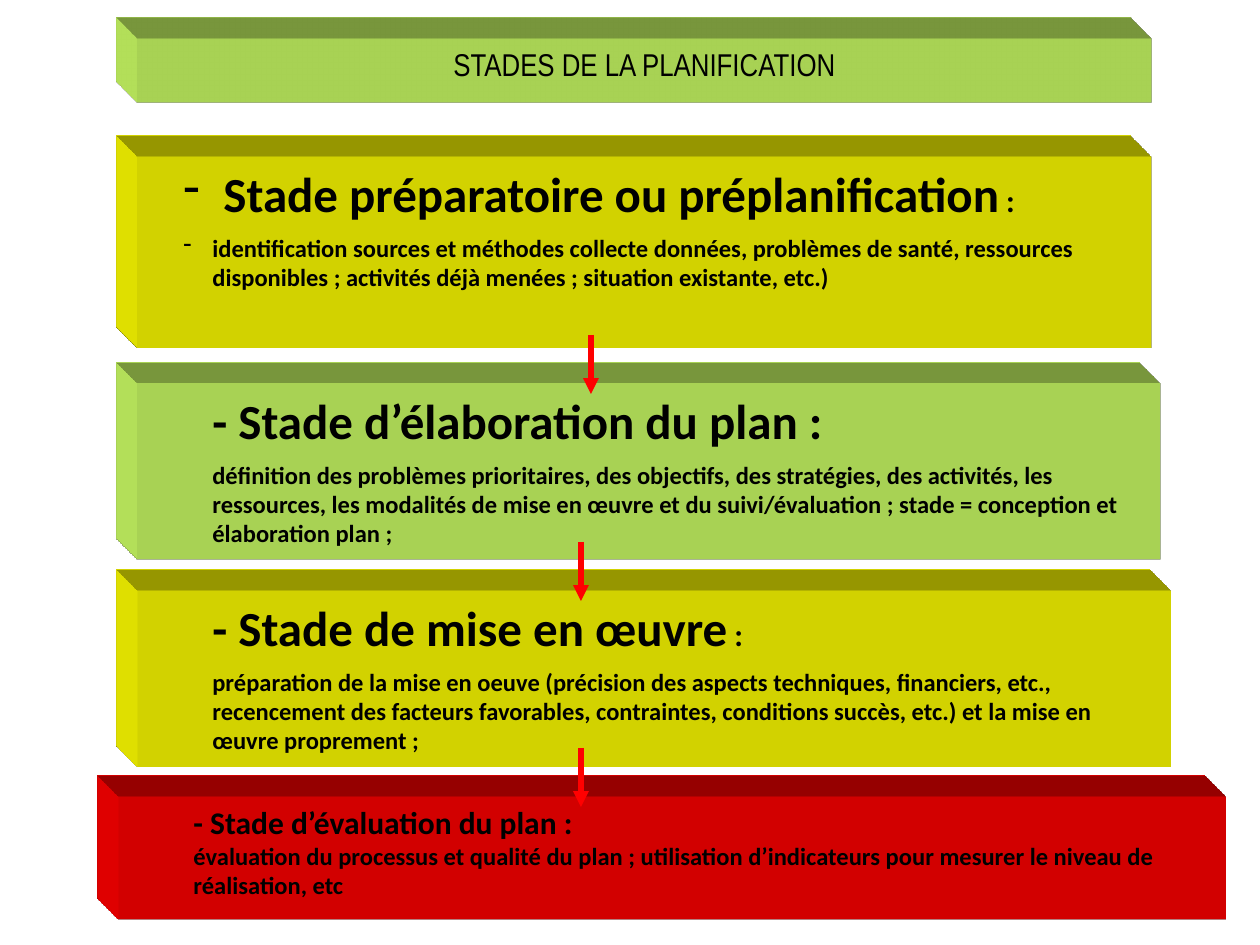
from lxml.etree import SubElement
from pptx import Presentation
from pptx.dml.color import RGBColor
from pptx.enum.shapes import MSO_CONNECTOR, MSO_SHAPE
from pptx.enum.text import MSO_ANCHOR, PP_ALIGN
from pptx.oxml import parse_xml
from pptx.oxml.ns import nsdecls, qn
from pptx.util import Pt

PX = 914400 // 126
GREEN = RGBColor(0xCC, 0xFF, 0x66)
YELLOW = RGBColor(0xFF, 0xFF, 0x00)
RED = RGBColor(0xFF, 0x00, 0x00)
BLACK = RGBColor(0x00, 0x00, 0x00)
INDENT = 63
HANGING = 29

deck = Presentation()
deck.slide_width, deck.slide_height = 1260 * PX, 945 * PX
page = deck.slides.add_slide(deck.slide_layouts[6])


def add_block(left, top, width, height, color):
    """Add a rectangle extruded towards the top left and return its text frame."""
    box = page.shapes.add_shape(MSO_SHAPE.RECTANGLE, *(n * PX for n in (left, top, width, height)))
    box.shadow.inherit = False
    box.fill.solid()
    box.fill.fore_color.rgb = color
    box.line.fill.background()
    properties = box.fill._xPr
    properties.append(parse_xml(
        f'<a:scene3d {nsdecls("a")}><a:camera prst="legacyObliqueTopLeft"/>'
        '<a:lightRig rig="legacyFlat3" dir="b"/></a:scene3d>'))
    properties.append(parse_xml(
        f'<a:sp3d {nsdecls("a")} extrusionH="430200" prstMaterial="legacyMatte">'
        '<a:bevelT w="13500" h="13500" prst="angle"/>'
        '<a:bevelB w="13500" h="13500" prst="angle"/>'
        f'<a:extrusionClr><a:srgbClr val="{color}"/></a:extrusionClr></a:sp3d>'))
    frame = box.text_frame
    frame.word_wrap = True
    frame.vertical_anchor = MSO_ANCHOR.TOP
    return frame


def add_span(para, text, **formats):
    span = para.add_run()
    span.text = text
    span.font.color.rgb = BLACK
    for name, value in formats.items():
        setattr(span.font, name, value)


title = add_block(137, 39, 1015, 64, GREEN).paragraphs[0]
title.alignment = PP_ALIGN.CENTER
add_span(title, "STADES DE LA PLANIFICATION", name="Arial Narrow", size=Pt(18))

# place, colour, bulleted, gap before the details, heading spans, details
stages = [
    ((137, 157, 1015, 191), YELLOW, True, 6,
     [(" Stade préparatoire ou préplanification", 28), (" :", 18)],
     "identification sources et méthodes collecte données, problèmes de santé, "
     "ressources disponibles ; activités déjà menées ; situation existante, etc.)"),
    ((137, 384, 1024, 176), GREEN, False, 6,
     [("- Stade d’élaboration du plan :", 28)],
     "définition des problèmes prioritaires, des objectifs, des stratégies, des "
     "activités, les ressources, les modalités de mise en œuvre et du "
     "suivi/évaluation ; stade = conception et élaboration plan ;"),
    ((137, 591, 1034, 176), YELLOW, False, 6,
     [("- Stade de mise en œuvre", 28), (" :", 18)],
     "préparation de la mise en oeuve (précision des aspects techniques, "
     "financiers, etc., recencement des facteurs favorables, contraintes, "
     "conditions succès, etc.) et la mise en œuvre proprement ;"),
    ((118, 797, 1108, 123), RED, False, 0,
     [("- Stade d’évaluation du plan :", 18)],
     "évaluation du processus et qualité du plan ; utilisation d’indicateurs pour "
     "mesurer le niveau de réalisation, etc"),
]
for place, color, bulleted, gap, heading, details in stages:
    frame = add_block(*place, color)
    frame.add_paragraph().space_before = Pt(gap)
    for para, spans in zip(frame.paragraphs, (heading, [(details, 14)])):
        para.alignment = PP_ALIGN.LEFT
        layout = para._p.get_or_add_pPr()
        layout.set("marL", str(INDENT * PX))
        layout.set("indent", str(-HANGING * PX if bulleted else 0))
        if bulleted:
            SubElement(layout, qn("a:buFontTx"))
            SubElement(layout, qn("a:buChar"), char="-")
        else:
            SubElement(layout, qn("a:buNone"))
        for text, size in spans:
            add_span(para, text, name="Calibri", size=Pt(size), bold=True)

for x, top in ((591, 335), (581, 542), (581, 748)):
    arrow = page.shapes.add_connector(
        MSO_CONNECTOR.STRAIGHT, x * PX, top * PX, x * PX, (top + 59) * PX)
    arrow.line.color.rgb = RED
    arrow.line.width = Pt(3)
    SubElement(arrow.line._get_or_add_ln(), qn("a:tailEnd"), type="triangle")
    SubElement(arrow._element.spPr, qn("a:effectLst"))

deck.save("out.pptx")
